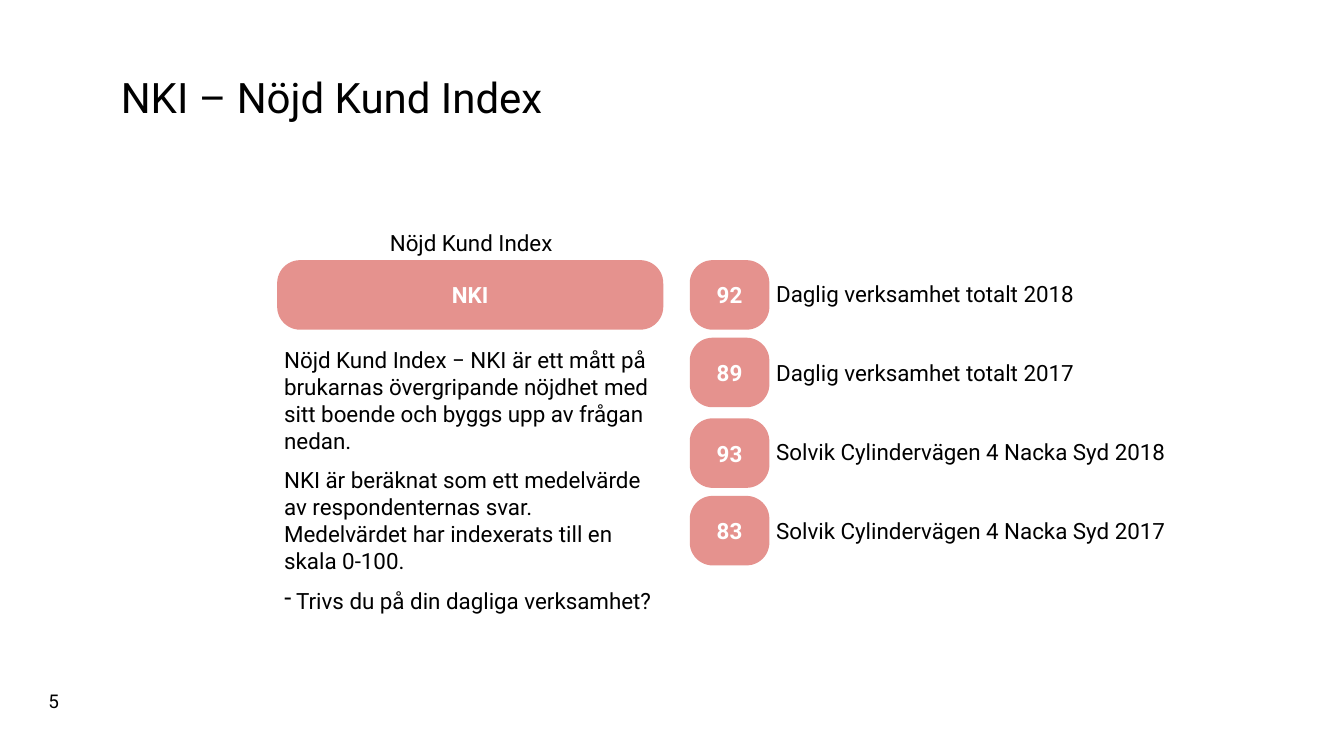
from dataclasses import dataclass

from lxml.etree import SubElement
from pptx import Presentation
from pptx.dml.color import RGBColor
from pptx.enum.shapes import MSO_SHAPE as Shape
from pptx.enum.text import MSO_ANCHOR as Anchor, PP_ALIGN as Align
from pptx.oxml.ns import qn
from pptx.slide import Slide
from pptx.text.text import TextFrame, _Paragraph as Paragraph
from pptx.util import Pt

FONT = "Roboto"
COLORS = {"text": "000000", "badge": "E5928E", "badge_text": "FFFFFF"}
BODY_SIZE = 16
PARAGRAPH_GAP = 9
LABEL_GAP = 37.2
HEADING_GAP = 65
BODY_INSETS = (5, 3.6, 3.6, 2.9)
DEFAULT_INSETS = (7.2, 3.6, 7.2, 3.6)
BADGE_HEIGHT = 49.7


@dataclass(frozen=True)
class Badge:
    text: str
    left: float
    top: float
    width: float


@dataclass(frozen=True)
class TextBlock:
    """Paragraphs with the space before each one after the first."""
    paragraphs: tuple[str, ...]
    left: float
    top: float
    width: float
    height: float
    gaps: tuple[float, ...] = ()
    size: float = BODY_SIZE
    insets: tuple[float, ...] = DEFAULT_INSETS
    anchor: Anchor = Anchor.TOP
    wrap: bool = True


SCORES = ((92, 185.8), (89, 241.2), (93, 298.8), (83, 354.2))
BADGES = [Badge("NKI", 198, 185.8, 275.8)] + [
    Badge(str(score), 492.7, top, 56.9) for score, top in SCORES
]

NUMBER = TextBlock(("5",), 27.4, 488.9, 31, 23.8, size=13.5, wrap=False)
TITLE = TextBlock(("NKI – Nöjd Kund Index",), 79.2, 45.4, 819.4, 45.4,
                  size=30, anchor=Anchor.BOTTOM)
EXPLANATION = TextBlock(
    (
        "Nöjd Kund Index",
        "Nöjd Kund Index − NKI är ett mått på brukarnas övergripande nöjdhet "
        "med sitt boende och byggs upp av frågan nedan.",
        "NKI är beräknat som ett medelvärde av respondenternas svar. "
        "Medelvärdet har indexerats till en skala 0-100.",
        "Trivs du på din dagliga verksamhet?",
    ),
    198, 159.8, 275.8, 290.9,
    gaps=(HEADING_GAP, PARAGRAPH_GAP, PARAGRAPH_GAP), insets=BODY_INSETS,
)
LABELS = TextBlock(
    tuple(f"{unit} {year}"
          for unit in ("Daglig verksamhet totalt", "Solvik Cylindervägen 4 Nacka Syd")
          for year in (2018, 2017)),
    549.4, 196.6, 301.7, 207.4,
    gaps=(LABEL_GAP,) * 3, insets=BODY_INSETS,
)


def format_runs(paragraph: Paragraph, size: float, color: str, bold: bool = False) -> None:
    for run in paragraph.runs:
        run.font.name = FONT
        run.font.size = Pt(size)
        run.font.bold = bold
        run.font.color.rgb = RGBColor.from_string(COLORS[color])


def add_text(slide: Slide, block: TextBlock) -> TextFrame:
    box = slide.shapes.add_textbox(
        Pt(block.left), Pt(block.top), Pt(block.width), Pt(block.height))
    text_frame = box.text_frame
    text_frame.word_wrap = block.wrap
    text_frame.vertical_anchor = block.anchor
    (text_frame.margin_left, text_frame.margin_top,
     text_frame.margin_right, text_frame.margin_bottom) = map(Pt, block.insets)
    text_frame.text = "\n".join(block.paragraphs)
    for paragraph in text_frame.paragraphs:
        format_runs(paragraph, block.size, "text")
    for paragraph, gap in zip(text_frame.paragraphs[1:], block.gaps):
        paragraph.space_before = Pt(gap)
    return text_frame


def add_dash_bullet(paragraph: Paragraph, indent: float) -> None:
    properties = paragraph._p.get_or_add_pPr()
    properties.set("marL", str(Pt(indent)))
    properties.set("indent", str(-Pt(indent)))
    SubElement(properties, qn("a:buChar"), char="-")


def add_badge(slide: Slide, badge: Badge) -> None:
    shape = slide.shapes.add_shape(
        Shape.ROUNDED_RECTANGLE, Pt(badge.left), Pt(badge.top),
        Pt(badge.width), Pt(BADGE_HEIGHT))
    shape.adjustments[0] = 0.33
    shape.shadow.inherit = False
    shape.fill.solid()
    shape.fill.fore_color.rgb = RGBColor.from_string(COLORS["badge"])
    shape.line.fill.background()
    text_frame = shape.text_frame
    text_frame.vertical_anchor = Anchor.MIDDLE
    text_frame.text = badge.text
    paragraph = text_frame.paragraphs[0]
    paragraph.alignment = Align.CENTER
    format_runs(paragraph, BODY_SIZE, "badge_text", bold=True)


def main() -> None:
    presentation = Presentation()
    presentation.slide_width = Pt(960)
    presentation.slide_height = Pt(540)
    slide = presentation.slides.add_slide(presentation.slide_layouts[6])

    add_text(slide, NUMBER)
    title = add_text(slide, TITLE)
    title.paragraphs[0].line_spacing = 0.9

    explanation = add_text(slide, EXPLANATION)
    explanation.paragraphs[0].alignment = Align.CENTER
    add_dash_bullet(explanation.paragraphs[-1], 8.6)

    add_text(slide, LABELS)
    for badge in BADGES:
        add_badge(slide, badge)

    presentation.save("out.pptx")


if __name__ == "__main__":
    main()
